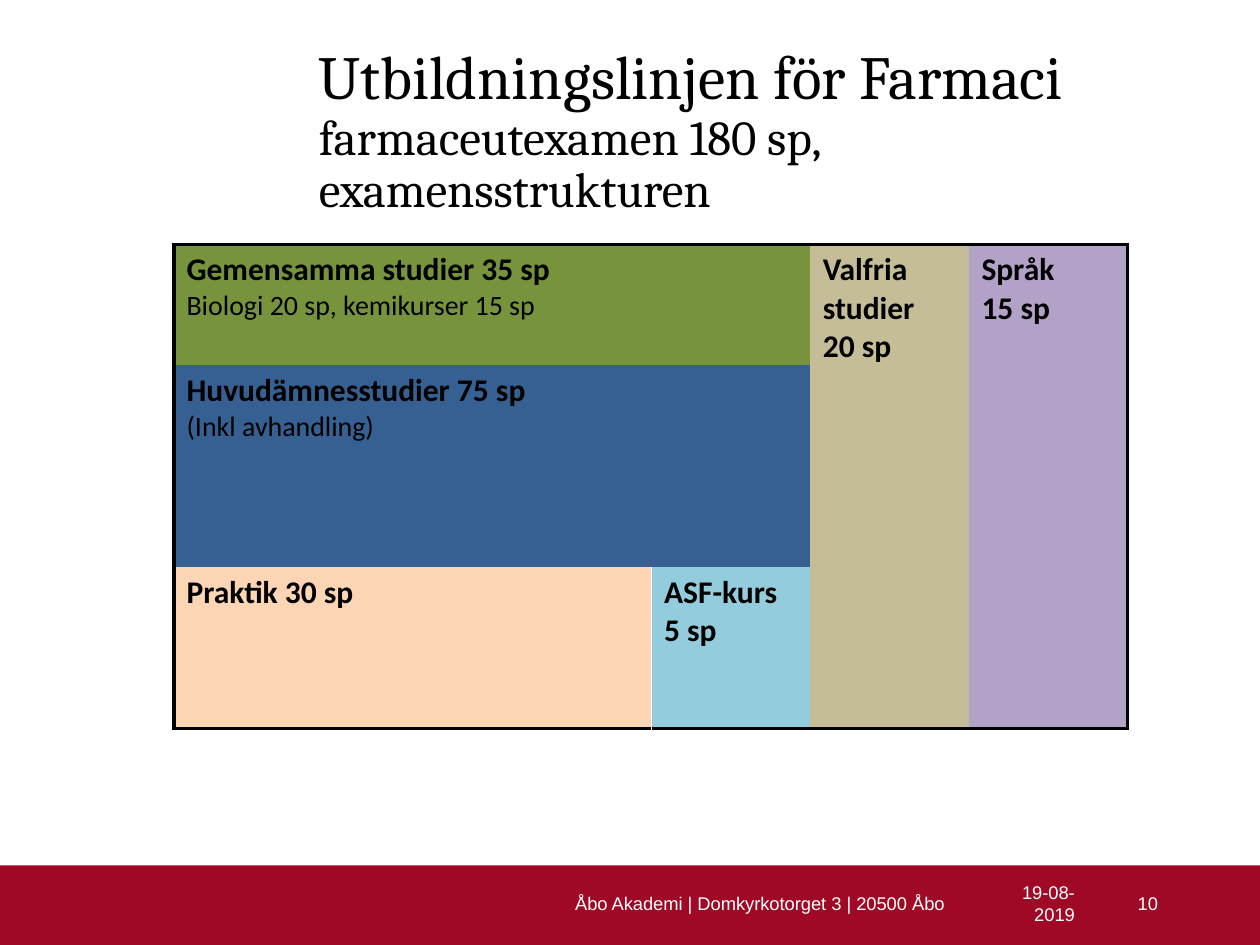
from copy import deepcopy
from lxml.etree import SubElement as Sub
from pptx import Presentation
from pptx.dml.color import RGBColor as RGB
from pptx.enum.shapes import MSO_SHAPE as Shape
from pptx.enum.text import MSO_ANCHOR as Anchor, MSO_AUTO_SIZE as Fit, PP_ALIGN as Align
from pptx.oxml.ns import qn
from pptx.util import Pt

BLACK = RGB(0x00, 0x00, 0x00)
WHITE = RGB(0xFF, 0xFF, 0xFF)
RED = RGB(0x9F, 0x09, 0x26)
GREEN = RGB(0x77, 0x93, 0x3C)
BLUE = RGB(0x37, 0x60, 0x92)
PEACH = RGB(0xFC, 0xD5, 0xB5)
AQUA = RGB(0x93, 0xCD, 0xDD)
SAND = RGB(0xC4, 0xBD, 0x97)
LILAC = RGB(0xB3, 0xA2, 0xC7)

HEAD = {"name": "Calibri", "size": Pt(18), "bold": True}
NOTE = {"name": "Calibri", "size": Pt(16), "bold": False}
FOOT = {"name": "Arial", "size": Pt(10.5)}

TITLE = [
    ("Utbildningslinjen för Farmaci", 35),
    ("farmaceutexamen 180 sp,", 28),
    ("examensstrukturen", 28),
]
COLS = [272.9, 90.7, 90.7, 90.7]
ROWS = [69.1, 115.2, 92.2]
BLOCKS = [
    (0, 0, 1, 2, GREEN, [("Gemensamma studier 35 sp", HEAD),
                         ("Biologi 20 sp, kemikurser 15 sp", NOTE)]),
    (0, 2, 3, 1, SAND, [("Valfria studier", HEAD), ("20 sp", HEAD)]),
    (0, 3, 3, 1, LILAC, [("Språk", HEAD), ("15 sp", HEAD)]),
    (1, 0, 1, 2, BLUE, [("Huvudämnesstudier 75 sp", HEAD),
                        ("(Inkl avhandling)", NOTE)]),
    (2, 0, 1, 1, PEACH, [("Praktik 30 sp", HEAD)]),
    (2, 1, 1, 1, AQUA, [("ASF-kurs 5 sp", HEAD)]),
]
FOOTER = [
    ("19-08-2019", 558.7, 62.6, 7.2),
    ("10", 632.2, 29.5, 0),
    ("Åbo Akademi | Domkyrkotorget 3 | 20500 Åbo", 263.5, 283.7, 7.2),
]


def put(item, vals):
    """Set each attribute in vals on item."""
    for key, val in vals.items():
        setattr(item, key, val)


def add_run(para, text, look, color):
    """Add a formatted run to a paragraph."""
    run = para.add_run()
    run.text = text
    put(run.font, look)
    run.font.color.rgb = color
    return run


def add_bar(slide):
    """Draw the red band at the foot of the slide."""
    bar = slide.shapes.add_shape(Shape.RECTANGLE, Pt(-0.7), Pt(494.6), Pt(721.4), Pt(46.1))
    bar.shadow.inherit = False
    bar.fill.solid()
    bar.fill.fore_color.rgb = RED
    bar.line.fill.background()


def add_title(slide):
    """Fill the title with lines of differing size."""
    title = slide.shapes.title
    put(title, {"left": Pt(182.2), "top": Pt(26.6), "width": Pt(495.4), "height": Pt(139.7)})
    frame = title.text_frame
    put(frame, {"margin_left": 0, "margin_right": 0, "margin_top": 0, "margin_bottom": 0,
                "word_wrap": True, "auto_size": Fit.NONE, "vertical_anchor": Anchor.TOP})
    para = frame.paragraphs[0]
    put(para, {"alignment": Align.LEFT, "line_spacing": 0.9, "space_before": Pt(0)})
    for num, (text, size) in enumerate(TITLE):
        if num:
            para.add_line_break()
            para._p.findall(qn("a:br"))[-1].append(deepcopy(run._r.rPr))
        run = add_run(para, text, {"name": "Cambria", "size": Pt(size)}, BLACK)


def add_edge(cell, side, line):
    """Add one cell border, or an empty one when line is None."""
    edge = Sub(cell._tc.get_or_add_tcPr(), qn("a:ln" + side))
    if line is None:
        edge.set("w", "0")
        Sub(edge, qn("a:noFill"))
        return
    color, width = line
    edge.set("w", str(int(Pt(width))))
    fill = Sub(edge, qn("a:solidFill"))
    Sub(fill, qn("a:srgbClr")).set("val", str(color))


def add_edges(cell, row, col):
    """Frame the table in black and part the two lower left cells in white."""
    frame, part = (BLACK, 2.25), (WHITE, 1)
    low = row + cell.span_height == len(ROWS)
    far = col + cell.span_width == len(COLS)
    lines = {
        "L": frame if col == 0 else part if (row, col) == (2, 1) else None,
        "R": frame if far else part if (row, col) == (2, 0) else None,
        "T": frame if row == 0 else None,
        "B": frame if low else None,
    }
    for side, line in lines.items():
        add_edge(cell, side, line)


def add_grid(slide):
    """Build the table of study blocks."""
    grid = slide.shapes.add_table(len(ROWS), len(COLS), Pt(99.4), Pt(139.7),
                                  Pt(sum(COLS)), Pt(sum(ROWS))).table
    put(grid, {"first_row": False, "horz_banding": False})
    for col, width in zip(grid.columns, COLS):
        col.width = Pt(width)
    for row, height in zip(grid.rows, ROWS):
        row.height = Pt(height)
    for row, col, high, wide, color, texts in BLOCKS:
        cell = grid.cell(row, col)
        if high * wide > 1:
            cell.merge(grid.cell(row + high - 1, col + wide - 1))
        for r in range(row, row + high):
            for c in range(col, col + wide):
                part = grid.cell(r, c)
                add_edges(part, r, c)
                part.fill.solid()
                part.fill.fore_color.rgb = color
        frame = cell.text_frame
        for num, (text, look) in enumerate(texts):
            para = frame.add_paragraph() if num else frame.paragraphs[0]
            add_run(para, text, look, BLACK)


def add_foot(slide, text, left, width, pad):
    """Add a white footer text on the band."""
    box = slide.shapes.add_textbox(Pt(left), Pt(501.8), Pt(width), Pt(28.8))
    frame = box.text_frame
    put(frame, {"margin_left": Pt(pad), "margin_right": Pt(pad), "margin_top": Pt(pad / 2),
                "margin_bottom": Pt(pad / 2), "word_wrap": True,
                "vertical_anchor": Anchor.MIDDLE})
    para = frame.paragraphs[0]
    para.alignment = Align.RIGHT
    add_run(para, text, FOOT, WHITE)


def main():
    """Build and save the slide."""
    deck = Presentation()
    put(deck, {"slide_width": Pt(720), "slide_height": Pt(540)})
    slide = deck.slides.add_slide(deck.slide_layouts[5])
    add_bar(slide)
    add_title(slide)
    add_grid(slide)
    for item in FOOTER:
        add_foot(slide, *item)
    deck.save("out.pptx")


if __name__ == "__main__":
    main()
